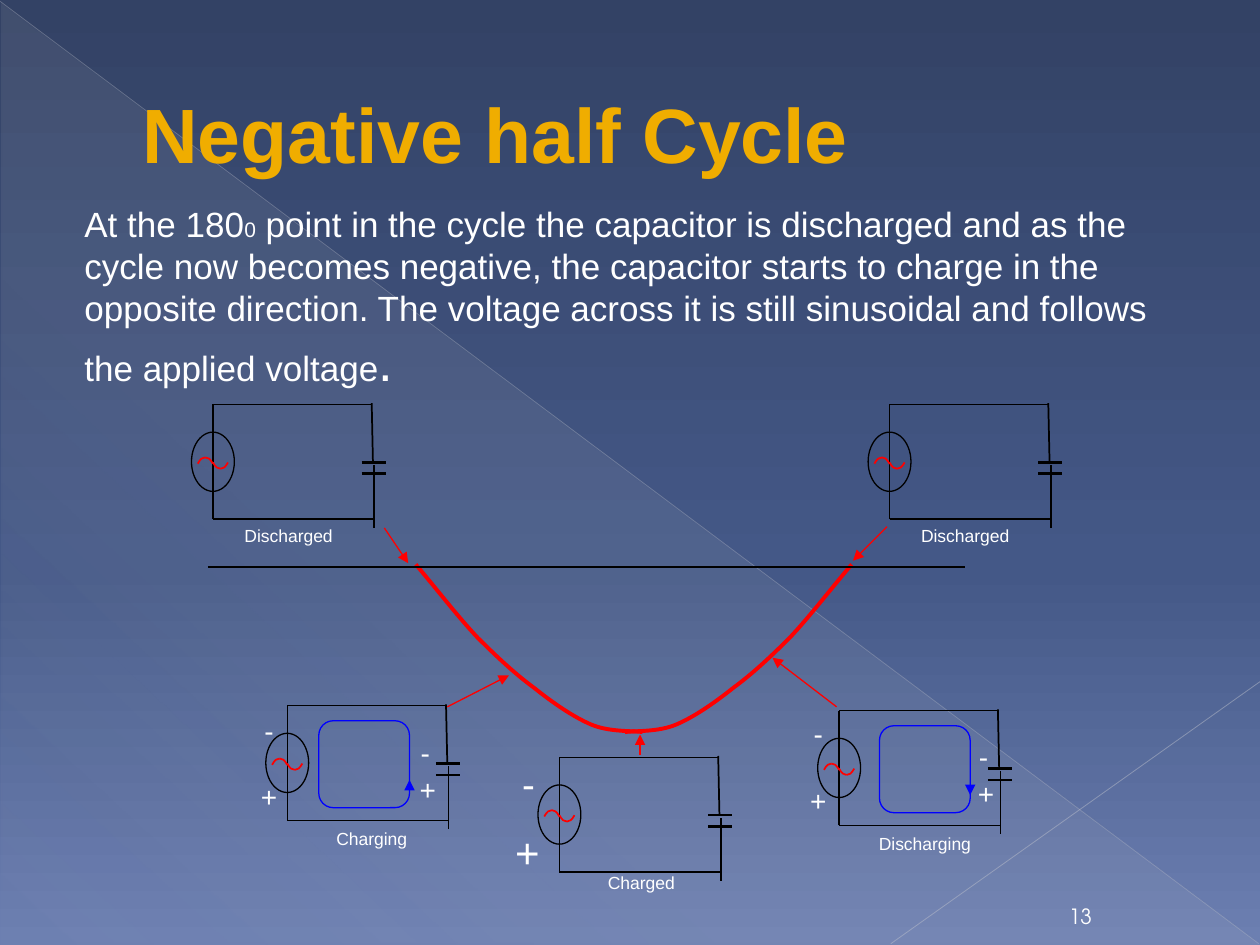
"""Build a slide on the negative half cycle of a capacitor on an AC supply."""
from dataclasses import dataclass

from lxml.etree import SubElement
from pptx import Presentation
from pptx.dml.color import RGBColor
from pptx.enum.shapes import MSO_CONNECTOR as Connector, MSO_SHAPE as Shape
from pptx.enum.text import MSO_ANCHOR as Anchor, PP_ALIGN as Align
from pptx.oxml import parse_xml
from pptx.oxml.ns import nsdecls, qn
from pptx.util import Inches, Pt


@dataclass(frozen=True)
class Theme:
    font: str = "Arial"
    number_font: str = "TeX Gyre Adventor"
    title: str = "F0AD00"
    title_edge: str = "A67800"
    text: str = "FFFFFF"
    wire: str = "000000"
    wave: str = "FF0000"
    loop: str = "0000FF"
    title_size: int = 44
    body_size: int = 20
    degree_size: int = 12
    stop_size: int = 30
    sign_size: int = 16
    caption_size: int = 10
    number_size: int = 12
    thin: float = 0.75
    medium: float = 1
    plate: float = 1.5
    thick: float = 2.25


THEME = Theme()
WIDTH, HEIGHT = 10, 7.5
BACKGROUND = [(0, "334265", 100), (60, "445887", 100), (100, "6C7FB1", 100)]
SHEEN = [(0, "D4D4D6", 10), (70, "D4D4D6", 8), (100, "D4D4D6", 1)]
DIAGONALS = [((0, 0.01, 9.99, 7.49), "B9BDC8", 0.39, 35),
             ((10, 5.41, 7.07, 7.49), "C1C4CE", 0.47, 45)]
TITLE = "Negative half Cycle"
BODY = [
    ("At the 180", THEME.body_size),
    ("0", THEME.degree_size),
    (" point in the cycle the capacitor is discharged and as the cycle now becomes "
     "negative, the capacitor starts to charge in the opposite direction. The voltage "
     "across it is still sinusoidal and follows the applied voltage", THEME.body_size),
    (".", THEME.stop_size),
]
NUMBER = "13"

SIGN = THEME.sign_size
CIRCUITS = [
    {"at": (1.69, 3.21), "caption": ("Discharged", 0.6, 0.91), "signs": []},
    {"at": (7.06, 3.21), "caption": ("Discharged", 0.6, 0.91), "signs": []},
    {"at": (2.28, 5.6), "caption": ("Charging", 0.67, 0.92),
     "signs": [("+", 1.12, 0.48, SIGN), ("-", 1.1, 0.19, SIGN),
               ("-", -0.14, 0.01, SIGN), ("+", -0.14, 0.54, SIGN)]},
    {"at": (4.44, 6.01), "caption": ("Charged", 0.65, 0.86),
     "signs": [("-", -0.24, -0.03, 22), ("+", -0.25, 0.5, 24)]},
    {"at": (6.66, 5.64), "caption": ("Discharging", 0.68, 0.92),
     "signs": [("+", 1.17, 0.47, SIGN), ("-", 1.15, 0.18, SIGN),
               ("-", -0.16, 0, SIGN), ("+", -0.16, 0.53, SIGN)]},
]
WIRES = [((0, 0.91, 0, 0), THEME.thin), ((0, 0, 1.26, 0), THEME.thin),
         ((0, 0.91, 1.28, 0.91), THEME.thin), ((1.28, 0.98, 1.28, 0.48), THEME.medium),
         ((1.27, 0.46, 1.26, -0.01), THEME.medium),
         ((1.18, 0.55, 1.37, 0.55), THEME.plate), ((1.18, 0.46, 1.37, 0.46), THEME.plate)]
QUARTER = [(0, 0), (0.01, 0.02), (0.02, 0.03), (0.03, 0.04),
           (0.04, 0.05), (0.05, 0.05), (0.06, 0.05)]
QUARTERS = [(-0.12, 0.47, 1, -1), (0, 0.47, -1, -1), (0, 0.46, 1, 1), (0.12, 0.46, -1, 1)]
HALF_WAVE = [(3.3, 4.48), (3.47, 4.68), (3.63, 4.89), (3.79, 5.06), (3.95, 5.22),
             (4.09, 5.35), (4.24, 5.46), (4.39, 5.58), (4.55, 5.69), (4.69, 5.75),
             (4.83, 5.81), (5.01, 5.8), (5.1, 5.81)]
WAVE_CENTRE = 5.03
AXIS = (1.65, 4.5, 7.66, 4.5)
POINTERS = [(3.05, 4.19, 3.24, 4.47), (3.55, 5.61, 4.04, 5.36), (5.08, 5.99, 5.08, 5.83),
            (6.64, 5.61, 6.13, 5.22), (7.04, 4.18, 6.77, 4.45)]
LOOPS = [((2.53, 5.72), (0.55, 0.47)), ((6.98, 5.76), (0.47, 0.55))]
LOOP_WIDTH, LOOP_HEIGHT = 0.72, 0.69


def gradient(stops, angle):
    marks = "".join(
        f'<a:gs pos="{place * 1000}"><a:srgbClr val="{colour}">'
        f'<a:alpha val="{alpha * 1000}"/></a:srgbClr></a:gs>' for place, colour, alpha in stops)
    return parse_xml(f'<a:gradFill {nsdecls("a")} rotWithShape="1"><a:gsLst>{marks}</a:gsLst>'
                     f'<a:lin ang="{angle * 60000}" scaled="0"/></a:gradFill>')


def set_gradient(fill, parent, stops, angle):
    fill.solid()
    solid = parent.find(qn("a:solidFill"))
    parent.replace(solid, gradient(stops, angle))


def set_line(shape, colour, width):
    shape.line.color.rgb = RGBColor.from_string(colour)
    shape.line.width = Pt(width)


def add_line(slide, ends, colour, width, arrow=False, alpha=None):
    line = slide.shapes.add_connector(Connector.STRAIGHT, *map(Inches, ends))
    set_line(line, colour, width)
    properties = line._element.spPr
    outline = properties.find(qn("a:ln"))
    if alpha:
        SubElement(outline.find(".//" + qn("a:srgbClr")), qn("a:alpha"), val=str(alpha * 1000))
    if arrow:
        SubElement(outline, qn("a:tailEnd"), type="triangle")
    SubElement(properties, qn("a:effectLst"))


def add_outline(slide, kind, box, colour):
    shape = slide.shapes.add_shape(kind, *map(Inches, box))
    shape.shadow.inherit = False
    shape.fill.background()
    set_line(shape, colour, THEME.thin)
    return shape


def add_curve(slide, controls, width):
    points = [(Inches(x), Inches(y)) for x, y in controls]
    builder = slide.shapes.build_freeform(*points[0])
    builder.add_line_segments(points[1:], close=False)
    shape = builder.convert_to_shape()
    outline = shape._element.spPr.find(".//" + qn("a:path"))
    segments = outline.findall(qn("a:lnTo"))
    for start in range(0, len(segments), 3):
        curve = SubElement(outline, qn("a:cubicBezTo"))
        for segment in segments[start:start + 3]:
            curve.append(segment[0])
            outline.remove(segment)
    shape.shadow.inherit = False
    shape.fill.background()
    set_line(shape, THEME.wave, width)


def add_text(slide, box, runs, colour=THEME.text, font=THEME.font, align=Align.CENTER,
             anchor=Anchor.TOP, left=0.1):
    frame = slide.shapes.add_textbox(*map(Inches, box)).text_frame
    frame.word_wrap = True
    frame.vertical_anchor = anchor
    frame.margin_left = Inches(left)
    paragraph = frame.paragraphs[0]
    paragraph.alignment = align
    for text, size in runs:
        run = paragraph.add_run()
        run.text = text
        run.font.name = font
        run.font.size = Pt(size)
        run.font.color.rgb = RGBColor.from_string(colour)
    return paragraph


def add_backdrop(slide):
    fill = slide.background.fill
    fill.solid()
    set_gradient(fill, slide._element.cSld.find(".//" + qn("p:bgPr")), BACKGROUND, 90)
    sheen = add_outline(slide, Shape.RIGHT_TRIANGLE, (0.01, 0.02, 9.99, 7.48), THEME.text)
    set_gradient(sheen.fill, sheen._element.spPr, SHEEN, 133)
    sheen.line.fill.background()
    for ends, colour, width, alpha in DIAGONALS:
        add_line(slide, ends, colour, width, alpha=alpha)


def add_words(slide):
    title = add_text(slide, (0.5, 0.29, 9, 1.53), [(TITLE, THEME.title_size)], THEME.title,
                     align=Align.LEFT, anchor=Anchor.MIDDLE, left=0.63)
    font = title.runs[0].font
    font.bold = True
    font._element.insert(0, parse_xml(
        f'<a:ln {nsdecls("a")} w="{Pt(0.5)}"><a:solidFill>'
        f'<a:srgbClr val="{THEME.title_edge}"/></a:solidFill></a:ln>'))
    add_text(slide, (0.5, 1.56, 9, 5.5), BODY, align=Align.LEFT, left=0.17)
    add_text(slide, (8.3, 7.09, 0.55, 0.33), [(NUMBER, THEME.number_size)],
             font=THEME.number_font, anchor=Anchor.BOTTOM)


def add_circuit(slide, circuit):
    x, y = circuit["at"]
    for (x1, y1, x2, y2), width in WIRES:
        add_line(slide, (x + x1, y + y1, x + x2, y + y2), THEME.wire, width)
    add_outline(slide, Shape.OVAL, (x - 0.17, y + 0.22, 0.34, 0.47), THEME.wire)
    for left, top, across, down in QUARTERS:
        add_curve(slide, [(x + left + across * dx, y + top + down * dy) for dx, dy in QUARTER],
                  THEME.medium)
    caption, dx, dy = circuit["caption"]
    add_text(slide, (x + dx - 0.65, y + dy, 1.3, 0.29), [(caption, THEME.caption_size)])
    for sign, dx, dy, size in circuit["signs"]:
        add_text(slide, (x + dx - 0.25, y + dy, 0.49, 0.35), [(sign, size)])


def main():
    presentation = Presentation()
    presentation.slide_width, presentation.slide_height = Inches(WIDTH), Inches(HEIGHT)
    slide = presentation.slides.add_slide(presentation.slide_layouts[6])
    add_backdrop(slide)
    add_words(slide)
    add_curve(slide, [(2 * WAVE_CENTRE - x, y) for x, y in HALF_WAVE], THEME.thick)
    add_curve(slide, HALF_WAVE, THEME.thick)
    for circuit in CIRCUITS:
        add_circuit(slide, circuit)
    add_line(slide, AXIS, THEME.wire, THEME.thin)
    for ends in POINTERS:
        add_line(slide, ends, THEME.wave, THEME.thin, arrow=True)
    for (x, y), (start, end) in LOOPS:
        add_outline(slide, Shape.ROUNDED_RECTANGLE, (x, y, LOOP_WIDTH, LOOP_HEIGHT), THEME.loop)
        side = x + LOOP_WIDTH
        add_line(slide, (side, y + start, side, y + end), THEME.loop, THEME.thin, arrow=True)
    presentation.save("out.pptx")


if __name__ == "__main__":
    main()
